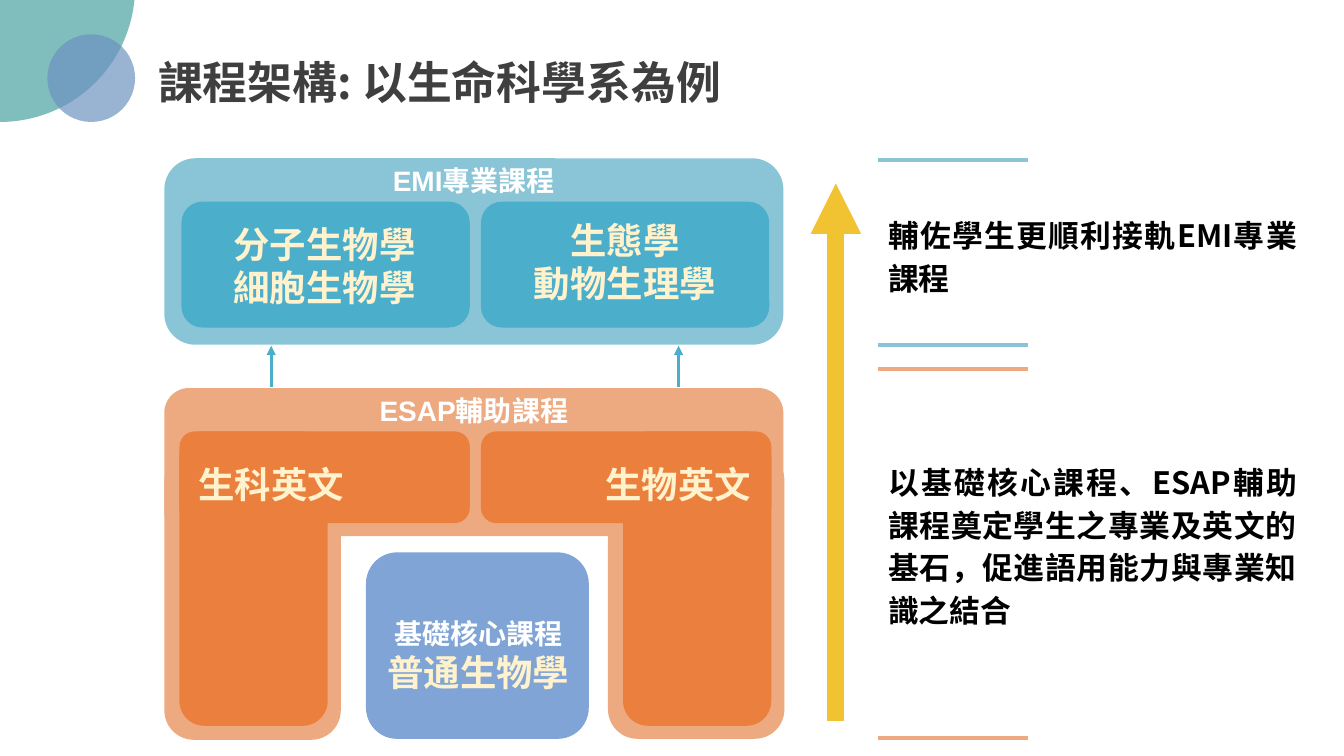
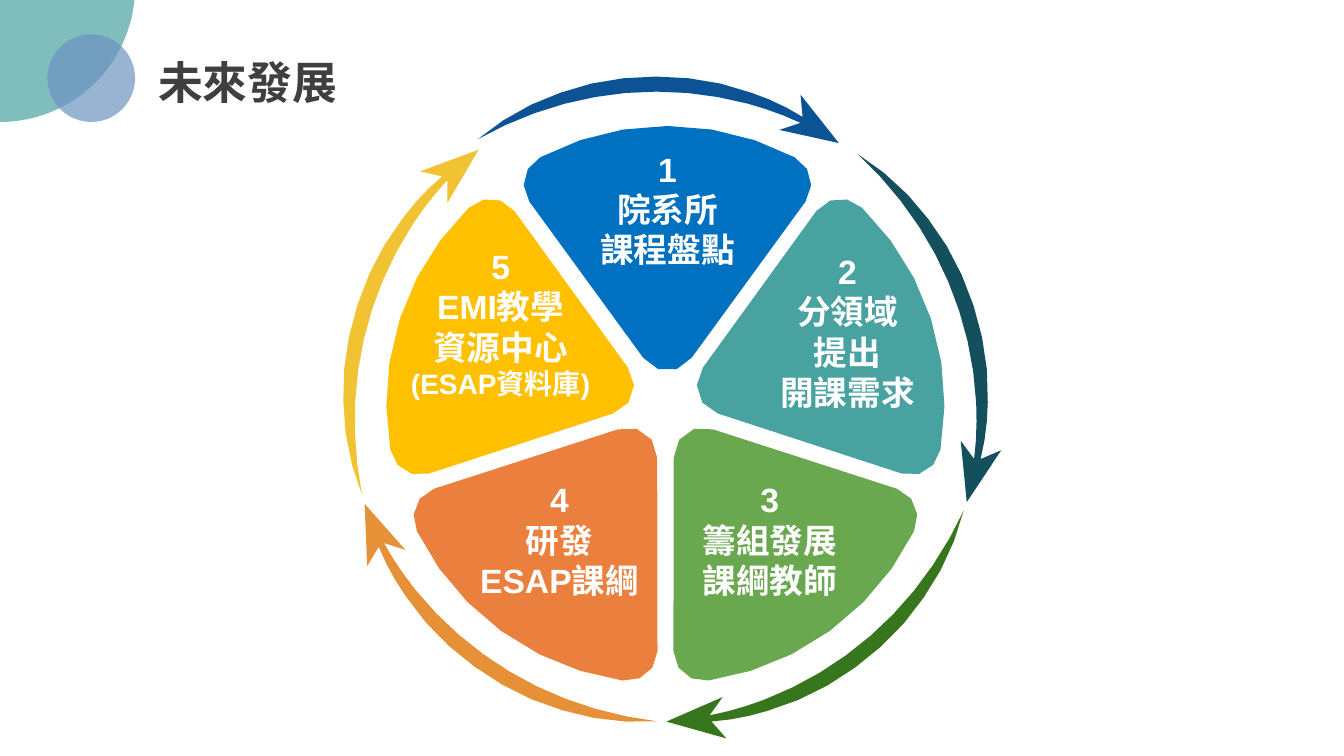
import math

from lxml import etree
from pptx import Presentation
from pptx import util as u
from pptx.dml.color import RGBColor
from pptx.enum import shapes, text
from pptx.oxml.ns import qn

COLORS = {
    "ink": "3F3F3F", "black": "000000", "white": "FFFFFF", "cream": "FFF2CC",
    "teal": "48A2A0", "haze": "6C92C0", "sky": "89C5D7", "lake": "4BAECB",
    "peach": "EDA97F", "orange": "EB803E", "periwinkle": "7FA4D5",
    "gold": "F1C232", "blue": "0070C0", "green": "6AA84F", "amber": "FFC000",
    "navy": "0B5394", "petrol": "134F5C", "forest": "38761D", "rust": "E69138",
}
CJK = "Noto Sans CJK TC"
LATIN = "Arial"
CENTER = text.PP_ALIGN.CENTER
JUSTIFY = text.PP_ALIGN.JUSTIFY
TOP, MIDDLE = text.MSO_ANCHOR.TOP, text.MSO_ANCHOR.MIDDLE


def paint(shape, color):
    shape.shadow.inherit = False
    shape.fill.solid()
    shape.fill.fore_color.rgb = RGBColor.from_string(COLORS[color])
    shape.line.fill.background()


def write(slide, box, lines, font=LATIN, align=CENTER, anchor=TOP, inset=0.1):
    """Add a bold text box; each line is (words, size, color, line spacing)."""
    frame = slide.shapes.add_textbox(*map(u.Inches, box)).text_frame
    frame.word_wrap = True
    frame.vertical_anchor = anchor
    frame.margin_left = frame.margin_right = u.Inches(0.1)
    frame.margin_top = frame.margin_bottom = u.Inches(inset)
    for i, (words, size, color, spacing) in enumerate(lines):
        para = frame.add_paragraph() if i else frame.paragraphs[0]
        para.alignment = align
        para.line_spacing = spacing
        run = para.add_run()
        run.text = words
        run.font.name = font
        run.font.size = u.Pt(size)
        run.font.bold = True
        run.font.color.rgb = RGBColor.from_string(COLORS[color])
        etree.SubElement(run.font._element, qn("a:ea"), typeface=CJK)


prs = Presentation()
prs.slide_width, prs.slide_height = u.Inches(13.33), u.Inches(7.5)

# Shared corner circles and title
slides = []
for title, width in (("課程架構: 以生命科學系為例", 6.46), ("未來發展", 2.32)):
    slide = prs.slides.add_slide(prs.slide_layouts[6])
    for left, top, size, color in ((-1.34, -1.47, 2.68, "teal"),
                                   (0.47, 0.34, 0.87, "haze")):
        circle = slide.shapes.add_shape(
            shapes.MSO_SHAPE.OVAL, *map(u.Inches, (left, top, size, size)))
        paint(circle, color)
        tint = circle.fill._xPr.find(qn("a:solidFill"))[0]
        etree.SubElement(tint, qn("a:alpha"), val="69000")
    write(slide, (1.47, 0.49, width, 0.44), [(title, 32, "ink", 1)],
          font=CJK, align=None, inset=0.05)
    slides.append(slide)
structure, future = slides

# Slide 1: course blocks
for box, color in (
    ((1.63, 1.57, 6.14, 1.85), "sky"),
    ((1.8, 2, 2.86, 1.25), "lake"),
    ((4.77, 2, 2.86, 1.25), "lake"),
    ((3.63, 5.48, 2.21, 1.85), "periwinkle"),
    ((1.63, 3.85, 6.14, 1.47), "peach"),
    ((1.63, 4.48, 1.75, 2.86), "peach"),
    ((6.03, 4.47, 1.75, 2.86), "peach"),
    ((1.78, 4.28, 2.88, 0.91), "orange"),
    ((1.78, 4.28, 1.47, 2.92), "orange"),
    ((4.77, 4.28, 2.88, 0.91), "orange"),
    ((6.18, 4.28, 1.47, 2.92), "orange"),
):
    block = structure.shapes.add_shape(
        shapes.MSO_SHAPE.ROUNDED_RECTANGLE, *map(u.Inches, box))
    block.adjustments[0] = 0.167
    paint(block, color)

# Slide 1: arrows and rules
rules = [((8.71, y, 10.2, y), color, 3, False)
         for y, color in ((1.59, "sky"), (3.42, "sky"),
                          (3.66, "peach"), (7.32, "peach"))]
arrows = [((8.29, 7.15, 8.29, 1.82), "gold", 12, True)]
arrows += [((x, 3.84, x, 3.43), "lake", 2.25, True) for x in (2.69, 6.73)]
for ends, color, width, pointed in rules + arrows:
    line = structure.shapes.add_connector(
        shapes.MSO_CONNECTOR.STRAIGHT, *map(u.Inches, ends))
    line.line.color.rgb = RGBColor.from_string(COLORS[color])
    line.line.width = u.Pt(width)
    if pointed:
        etree.SubElement(line.line._get_or_add_ln(), qn("a:tailEnd"), type="triangle")
    etree.SubElement(line._element.spPr, qn("a:effectLst"))

# Slide 1: labels
for box, words in (((1.63, 1.47, 6.14, 0.64), "EMI專業課程"),
                   ((1.63, 3.8, 6.14, 0.55), "ESAP輔助課程")):
    write(structure, box, [(words, 20, "white", 1)], anchor=MIDDLE)
write(structure, (3.64, 5.49, 2.21, 1.85),
      [("基礎核心課程", 20, "white", 1.5), ("普通生物學", 26, "cream", 1)],
      anchor=MIDDLE)
for box, font, courses in (
    ((2.07, 2.1, 2.3, 1.08), CJK, ("分子生物學", "細胞生物學")),
    ((5.05, 2.06, 2.3, 1.08), CJK, ("生態學", "動物生理學")),
    ((1.64, 4.48, 2.1, 0.64), LATIN, ("生科英文",)),
    ((5.68, 4.48, 2.1, 0.64), LATIN, ("生物英文",)),
):
    write(structure, box, [(course, 26, "cream", 1) for course in courses], font=font)
for top, height, aim in (
    (2, 1.05, "輔佐學生更順利接軌EMI專業課程"),
    (4.45, 1.91, "以基礎核心課程、ESAP輔助課程奠定學生之專業及英文的"
                 "基石，促進語用能力與專業知識之結合"),
):
    write(structure, (8.71, top, 4.25, height), [(aim, 22, "black", 1.15)],
          font=CJK, align=JUSTIFY)

# Slide 2: outlines around the wheel centre; pairs are lines, sixes are curves
WEDGE = [
    (0.24, -0.47), (1.37, -2.02),
    (1.48, -2.17, 1.42, -2.38, 1.26, -2.46), (0.88, -2.66, 0.45, -2.77, 0, -2.77),
    (-0.45, -2.77, -0.88, -2.66, -1.26, -2.46),
    (-1.42, -2.38, -1.48, -2.17, -1.37, -2.02),
    (-0.24, -0.47), (-0.13, -0.3, 0.13, -0.3, 0.24, -0.47),
]
SWOOSH = [
    (1.82, -2.52), (1.44, -3), (1.46, -2.78),
    (1.3, -2.88, 1.13, -2.96, 0.95, -3.02), (0.65, -3.13, 0.33, -3.18, 0.01, -3.18),
    (-0.32, -3.18, -0.64, -3.13, -0.94, -3.02),
    (-1.24, -2.92, -1.52, -2.76, -1.76, -2.56),
    (-1.49, -2.71, -1.2, -2.83, -0.9, -2.91), (-0.6, -2.99, -0.3, -3.03, 0.01, -3.03),
    (0.32, -3.03, 0.62, -2.99, 0.92, -2.91), (1.1, -2.86, 1.27, -2.8, 1.44, -2.72),
    (1.23, -2.65),
]
HUB = (6.6, 4.02)
STEPS = 3
pieces = []
for turn, (wedge, swoosh) in enumerate((("blue", "navy"), ("teal", "petrol"),
                                        ("green", "forest"), ("orange", "rust"),
                                        ("amber", "gold"))):
    pieces.append((WEDGE, wedge, turn, HUB if turn else (6.62, 4.02), 1))
    if turn:
        pieces.append((SWOOSH, swoosh, turn, HUB, 1.01))
    else:
        pieces.append((SWOOSH, swoosh, turn, (6.5, 3.94), 1))

for outline, color, turn, (hub_x, hub_y), scale in pieces:
    points = [outline[0]]
    for segment in outline[1:]:
        if len(segment) == 2:
            points.append(segment)
            continue
        controls = (points[-1], segment[:2], segment[2:4], segment[4:])
        for step in range(1, STEPS + 1):
            t = step / STEPS
            weights = ((1 - t) ** 3, 3 * t * (1 - t) ** 2, 3 * t * t * (1 - t), t ** 3)
            points.append(tuple(sum(w * c[axis] for w, c in zip(weights, controls))
                                for axis in (0, 1)))
    angle = turn * math.tau / 5
    cos, sin = scale * math.cos(angle), scale * math.sin(angle)
    turned = [(u.Inches(hub_x + x * cos - y * sin), u.Inches(hub_y + x * sin + y * cos))
              for x, y in points]
    builder = future.shapes.build_freeform(*turned[0])
    builder.add_line_segments(turned[1:], close=True)
    paint(builder.convert_to_shape(), color)

# Slide 2: numbered steps
for number, (box, words) in enumerate((
    ((5.46, 1.42, 2.32, 1.31), ("院系所", "課程盤點")),
    ((7.18, 2.43, 2.45, 1.72), ("分領域", "提出", "開課需求")),
    ((6.67, 4.7, 1.93, 1.31), ("籌組發展", "課綱教師")),
    ((4.58, 4.7, 1.94, 1.31), ("研發", "ESAP課綱")),
    ((3.84, 2.38, 2.25, 1.65), ("EMI教學", "資源中心", "(ESAP資料庫)")),
), start=1):
    write(future, box,
          [(line, 20 if line.startswith("(") else 24, "white", 1)
           for line in (str(number), *words)],
          anchor=MIDDLE, inset=0.05)

prs.save("out.pptx")
